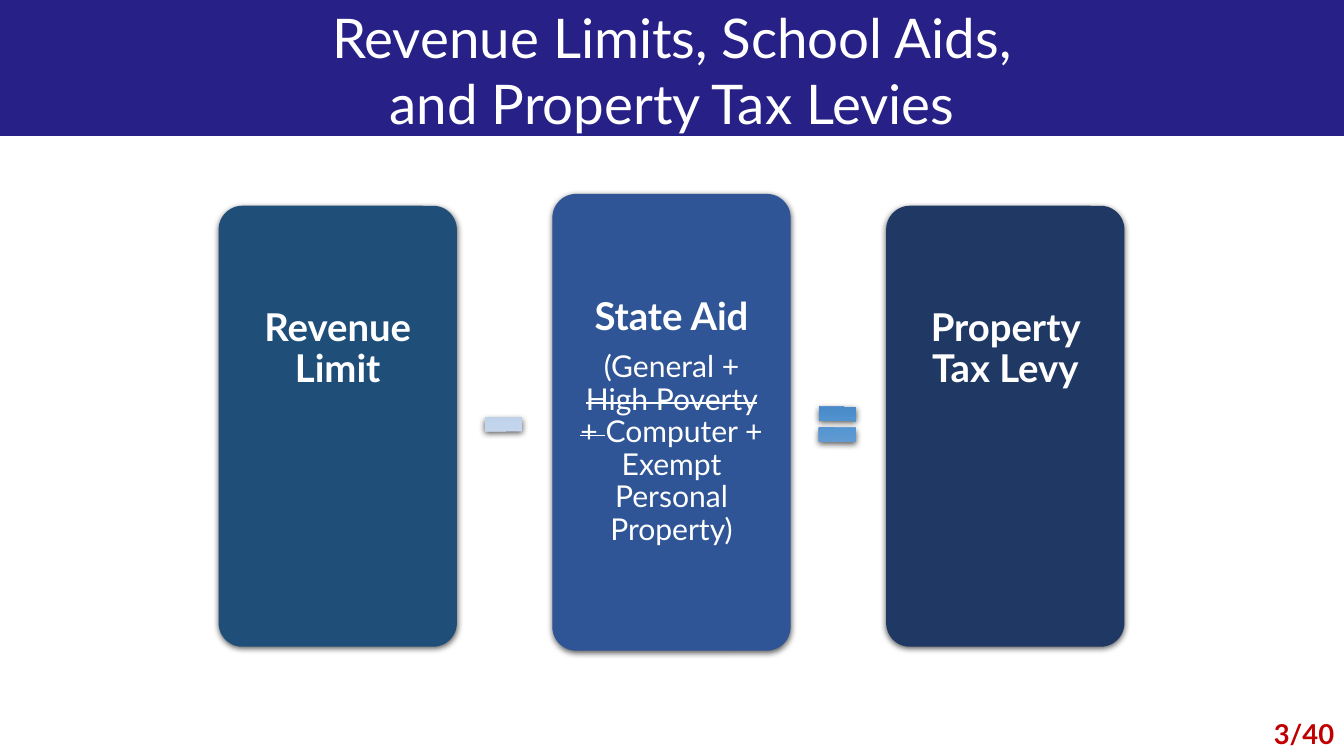
from copy import deepcopy

from lxml import etree
from pptx import Presentation
from pptx.dml.color import RGBColor
from pptx.enum.shapes import MSO_SHAPE as SHAPE
from pptx.enum.text import MSO_ANCHOR as ANCHOR, MSO_AUTO_SIZE as AUTO, PP_ALIGN as ALIGN
from pptx.oxml import parse_xml
from pptx.oxml.ns import nsdecls
from pptx.util import Inches, Pt

FONT = "Lato"
COLORS = {
    "banner": "262087", "white": "FFFFFF", "page": "C00000",
    "limit": "1F4E79", "aid": "2F5597", "levy": "203864",
}
MINUS_STOPS = ["CEDCEF", "C3D5ED", "AABDD6"]
EQUAL_STOPS = ["6EA0D2", "5194D1", "4184C1"]


def set_font(font, size, color, bold=False):
    font.name, font.size, font.bold = FONT, Pt(size), bold
    font.color.rgb = RGBColor.from_string(COLORS[color])


def add_shadowed(kind, left, top, width, height):
    sp = slide.shapes.add_shape(kind, Inches(left), Inches(top), Inches(width), Inches(height))
    sp.line.fill.background()
    sp.shadow.inherit = False
    sp._element.spPr.find("{*}effectLst").append(parse_xml(
        f'<a:outerShdw {nsdecls("a")} blurRad="{Pt(4.5)}" dist="{Pt(1.5)}" dir="5400000" '
        'algn="ctr" rotWithShape="0"><a:srgbClr val="000000"><a:alpha val="63000"/>'
        '</a:srgbClr></a:outerShdw>'))
    return sp


prs = Presentation()
prs.slide_width, prs.slide_height = Inches(13.65), Inches(7.68)
slide = prs.slides.add_slide(prs.slide_layouts[5])

# Banner, placed behind the title
banner = slide.shapes.add_shape(SHAPE.RECTANGLE, 0, 0, prs.slide_width, Inches(1.38))
banner.shadow.inherit = False
banner.fill.solid()
banner.fill.fore_color.rgb = RGBColor.from_string(COLORS["banner"])
banner.line.fill.background()
slide.shapes._spTree.insert(2, banner._element)

# Title
title = slide.shapes.title
title.left, title.top, title.width, title.height = 0, 0, prs.slide_width, Inches(1.41)
tf = title.text_frame
tf.text = "Revenue Limits, School Aids,\vand Property Tax Levies"
tf.auto_size = AUTO.NONE
tf.vertical_anchor = ANCHOR.MIDDLE
p = tf.paragraphs[0]
p.alignment = ALIGN.CENTER
set_font(p.font, 40, "white")

# Page number
page = slide.shapes.add_textbox(Inches(12.68), Inches(7.24), Inches(0.97), Inches(0.44))
page.text_frame.word_wrap = True
p = page.text_frame.paragraphs[0]
p.text = "3/40"
p.alignment = ALIGN.RIGHT
set_font(p.font, 20, "page", bold=True)

# Cards: heading, fill, top, height, text anchor, top inset
cards = [
    ("Revenue Limit", "limit", 2.09, 4.48, ANCHOR.TOP, 0.97),
    ("State Aid", "aid", 1.97, 4.64, ANCHOR.MIDDLE, 0.19),
    ("Property Tax Levy", "levy", 2.09, 4.48, ANCHOR.TOP, 0.97),
]
aid_parts = [("(General + ", False), ("High Poverty + ", True),
             ("Computer + Exempt Personal Property)", False)]
for i, (heading, color, top, height, anchor, inset) in enumerate(cards):
    card = add_shadowed(SHAPE.ROUNDED_RECTANGLE, 2.22 + 3.39 * i, top, 2.42, height)
    card.adjustments[0] = 0.1
    card.fill.solid()
    card.fill.fore_color.rgb = RGBColor.from_string(COLORS[color])
    tf = card.text_frame
    tf.word_wrap = True
    tf.vertical_anchor = anchor
    tf.margin_top = Inches(inset)
    tf.margin_left = tf.margin_right = tf.margin_bottom = Inches(0.19)
    p = tf.paragraphs[0]
    p.text = heading
    set_font(p.font, 28, "white", bold=True)
    if color == "aid":
        p = tf.add_paragraph()
        set_font(p.font, 22, "white")
        for text, struck in aid_parts:
            r = p.add_run()
            r.text = text
            if struck:
                r.font._element.set("strike", "sngStrike")
    for p in tf.paragraphs:
        p.alignment = ALIGN.CENTER
        p.line_spacing = 0.9
        p.space_after = Pt(9.5)

# Minus and equals signs between the cards
for kind, left, angle, stops in [(SHAPE.MATH_MINUS, 4.86, 179.4, MINUS_STOPS),
                                 (SHAPE.MATH_EQUAL, 8.25, 180.6, EQUAL_STOPS)]:
    sign = add_shadowed(kind, left, 4.01, 0.51, 0.6)
    sign.rotation = angle
    sign.fill.gradient()
    sign.fill.gradient_angle = 270
    first = sign.fill._fill._gradFill.find("{*}gsLst")[0]
    middle = deepcopy(first)
    middle.set("pos", "50000")
    first.addnext(middle)
    for stop, color in zip(sign.fill.gradient_stops, stops):
        stop.color.rgb = RGBColor.from_string(color)

prs.save("out.pptx")
